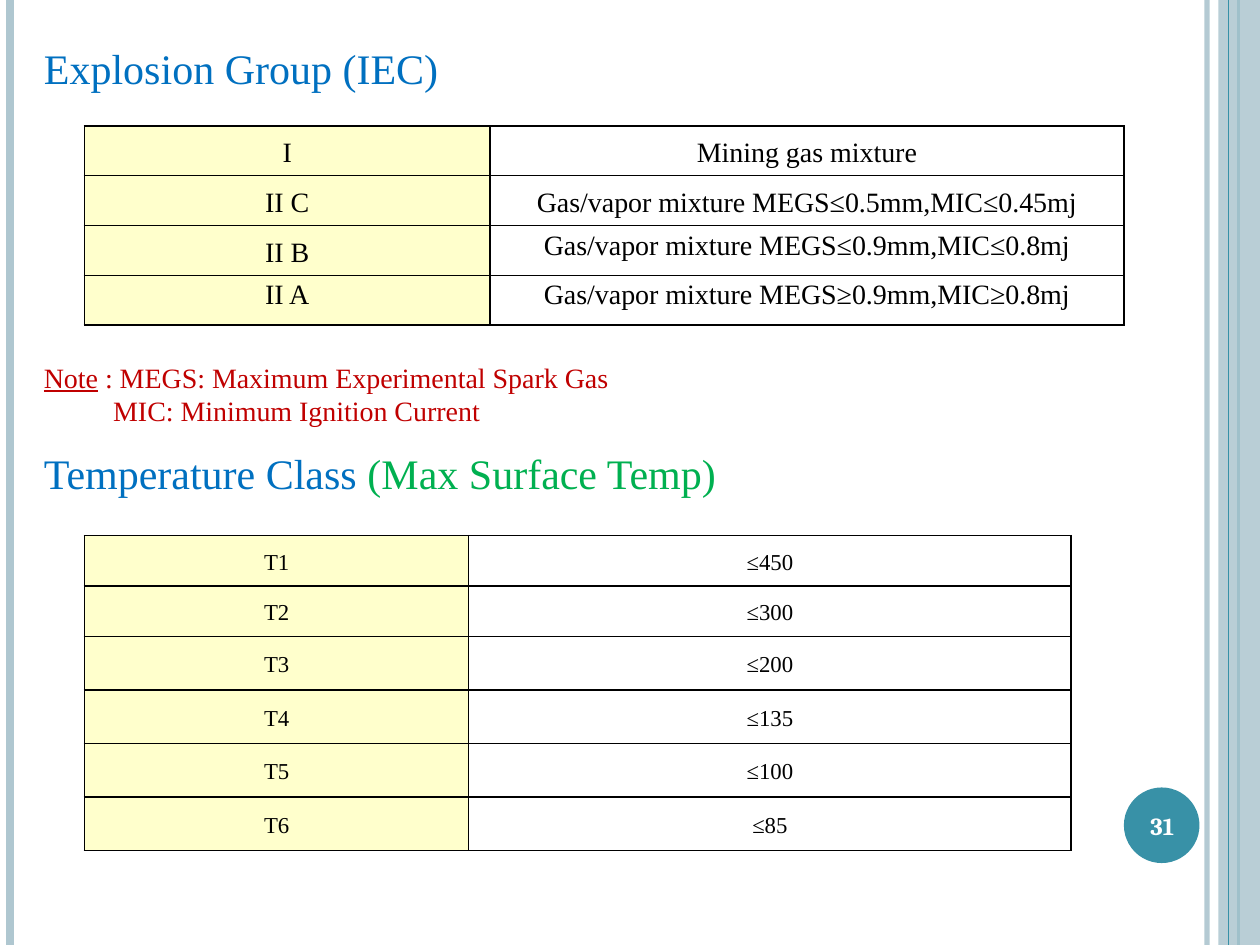
import lxml.etree
import pptx
import pptx.dml.color
import pptx.enum.shapes
import pptx.enum.text
import pptx.oxml
import pptx.oxml.ns
import pptx.util

Inches = pptx.util.Inches
Pt = pptx.util.Pt
RGBColor = pptx.dml.color.RGBColor
ALIGN = pptx.enum.text.PP_ALIGN
ANCHOR = pptx.enum.text.MSO_ANCHOR
SHAPE = pptx.enum.shapes.MSO_SHAPE
qn = pptx.oxml.ns.qn

BLACK = RGBColor(0x00, 0x00, 0x00)
WHITE = RGBColor(0xFF, 0xFF, 0xFF)
PALE_BLUE = RGBColor(0xAF, 0xC7, 0xD0)
TEAL = RGBColor(0x38, 0x91, 0xA7)
BLUE = RGBColor(0x00, 0x70, 0xC0)
GREEN = RGBColor(0x00, 0xB0, 0x50)
RED = RGBColor(0xC0, 0x00, 0x00)
YELLOW = RGBColor(0xFF, 0xFF, 0xCC)


def write_text(paragraph, text, size=16, color=BLACK, font="Times New Roman",
               bold=False, underline=False, align=ALIGN.LEFT, spacing=1.0, indent=0):
    paragraph.alignment = align
    paragraph.line_spacing = spacing
    if indent:
        paragraph._p.get_or_add_pPr().set("marL", str(Inches(indent)))
    run = paragraph.add_run()
    run.text = text
    run.font.name = font
    run.font.size = Pt(size)
    run.font.color.rgb = color
    run.font.bold = bold
    run.font.underline = underline


def set_alpha(element, percent):
    color = element.find(".//" + qn("a:srgbClr"))
    lxml.etree.SubElement(color, qn("a:alpha")).set("val", str(percent * 1000))


presentation = pptx.Presentation()
presentation.slide_width = Inches(10)
presentation.slide_height = Inches(7.5)
slide = presentation.slides.add_slide(presentation.slide_layouts[6])

frame_parts = [
    ("line", 9.58, 3, PALE_BLUE, 93),
    ("line", 0.08, 4.5, PALE_BLUE, 100),
    ("line", 9.83, 1.5, TEAL, 100),
    ("band", 9.67, 0.33, PALE_BLUE, 87),
    ("line", 9.75, 0.75, TEAL, 100),
]
for kind, left, width, color, opacity in frame_parts:
    if kind == "line":
        part = slide.shapes.add_connector(
            pptx.enum.shapes.MSO_CONNECTOR.STRAIGHT,
            Inches(left), Inches(0), Inches(left), Inches(7.5))
        part.line.color.rgb = color
        part.line.width = Pt(width)
        lxml.etree.SubElement(part._element.spPr, qn("a:effectLst"))
    else:
        part = slide.shapes.add_shape(
            SHAPE.RECTANGLE, Inches(left), Inches(0), Inches(width), Inches(7.5))
        part.shadow.inherit = False
        part.fill.solid()
        part.fill.fore_color.rgb = color
        part.line.fill.background()
    if opacity < 100:
        set_alpha(part._element.spPr, opacity)

badge = slide.shapes.add_shape(
    SHAPE.OVAL, Inches(8.92), Inches(6.25), Inches(0.6), Inches(0.6))
badge.shadow.inherit = False
badge.fill.solid()
badge.fill.fore_color.rgb = TEAL
badge.line.fill.background()

text_boxes = [
    ((0.25, 0.25, 4.25, 0.58), [
        [("Explosion Group (IEC)", dict(size=24, color=BLUE))]]),
    ((8.89, 6.27, 0.67, 0.57), [
        [("31", dict(size=14, color=WHITE, font="Cambria", bold=True, align=ALIGN.CENTER))]]),
    ((0.25, 2.56, 8.67, 1.13), [
        [("Note", dict(color=RED, underline=True)),
         (" : MEGS: Maximum Experimental Spark Gas", dict(color=RED))],
        [("MIC: Minimum Ignition Current", dict(color=RED, indent=0.55))]]),
    ((-0.25, 3.5, 6.5, 0.5), [
        [("Temperature Class ", dict(size=24, color=BLUE, indent=0.5)),
         ("(Max Surface Temp)", dict(size=24, color=GREEN))]]),
]
for position, paragraphs in text_boxes:
    text_frame = slide.shapes.add_textbox(*map(Inches, position)).text_frame
    text_frame.word_wrap = True
    text_frame.vertical_anchor = ANCHOR.MIDDLE
    for index, runs in enumerate(paragraphs):
        paragraph = text_frame.add_paragraph() if index else text_frame.paragraphs[0]
        for text, text_format in runs:
            write_text(paragraph, text, **text_format)

explosion_groups = [
    ("I", "Mining gas mixture"),
    ("II C", "Gas/vapor mixture MEGS≤0.5mm,MIC≤0.45mj"),
    ("II B", "Gas/vapor mixture MEGS≤0.9mm,MIC≤0.8mj"),
    ("II A", "Gas/vapor mixture MEGS≥0.9mm,MIC≥0.8mj"),
]
temperature_classes = [
    ("T1", "≤450"), ("T2", "≤300"), ("T3", "≤200"),
    ("T4", "≤135"), ("T5", "≤100"), ("T6", "≤85"),
]
tables = [
    (explosion_groups, 1, (3.22, 5.03), [1.58 / 4] * 4, 16, {(2, 1), (3, 0), (3, 1)}),
    (temperature_classes, 4.25, (3.05, 4.78), [0.4] * 2 + [1.7 / 4] * 4, 13, set()),
]
for rows, top, widths, heights, size, top_cells in tables:
    table = slide.shapes.add_table(
        len(rows), 2, Inches(0.67), Inches(top),
        Inches(sum(widths)), Inches(sum(heights))).table
    table.first_row = False
    table.horz_banding = False
    for column, width in zip(table.columns, widths):
        column.width = Inches(width)
    for row_index, (values, height) in enumerate(zip(rows, heights)):
        table.rows[row_index].height = Inches(height)
        for column_index, value in enumerate(values):
            cell = table.cell(row_index, column_index)
            cell.margin_left = cell.margin_right = Inches(0.07)
            cell.margin_top = cell.margin_bottom = 0
            at_top = (row_index, column_index) in top_cells
            cell.vertical_anchor = ANCHOR.TOP if at_top else ANCHOR.MIDDLE
            if column_index == 0:
                cell.fill.solid()
                cell.fill.fore_color.rgb = YELLOW
            else:
                cell.fill.background()
            properties = cell._tc.get_or_add_tcPr()
            for position, side in enumerate(("lnL", "lnR", "lnT", "lnB")):
                border = pptx.oxml.parse_xml(
                    f'<a:{side} {pptx.oxml.ns.nsdecls("a")} w="{Pt(1)}">'
                    f'<a:solidFill><a:srgbClr val="{BLACK}"/></a:solidFill></a:{side}>')
                properties.insert(position, border)
            write_text(cell.text_frame.paragraphs[0], value, size=size,
                       align=ALIGN.CENTER, spacing=1.15)

presentation.save("out.pptx")
